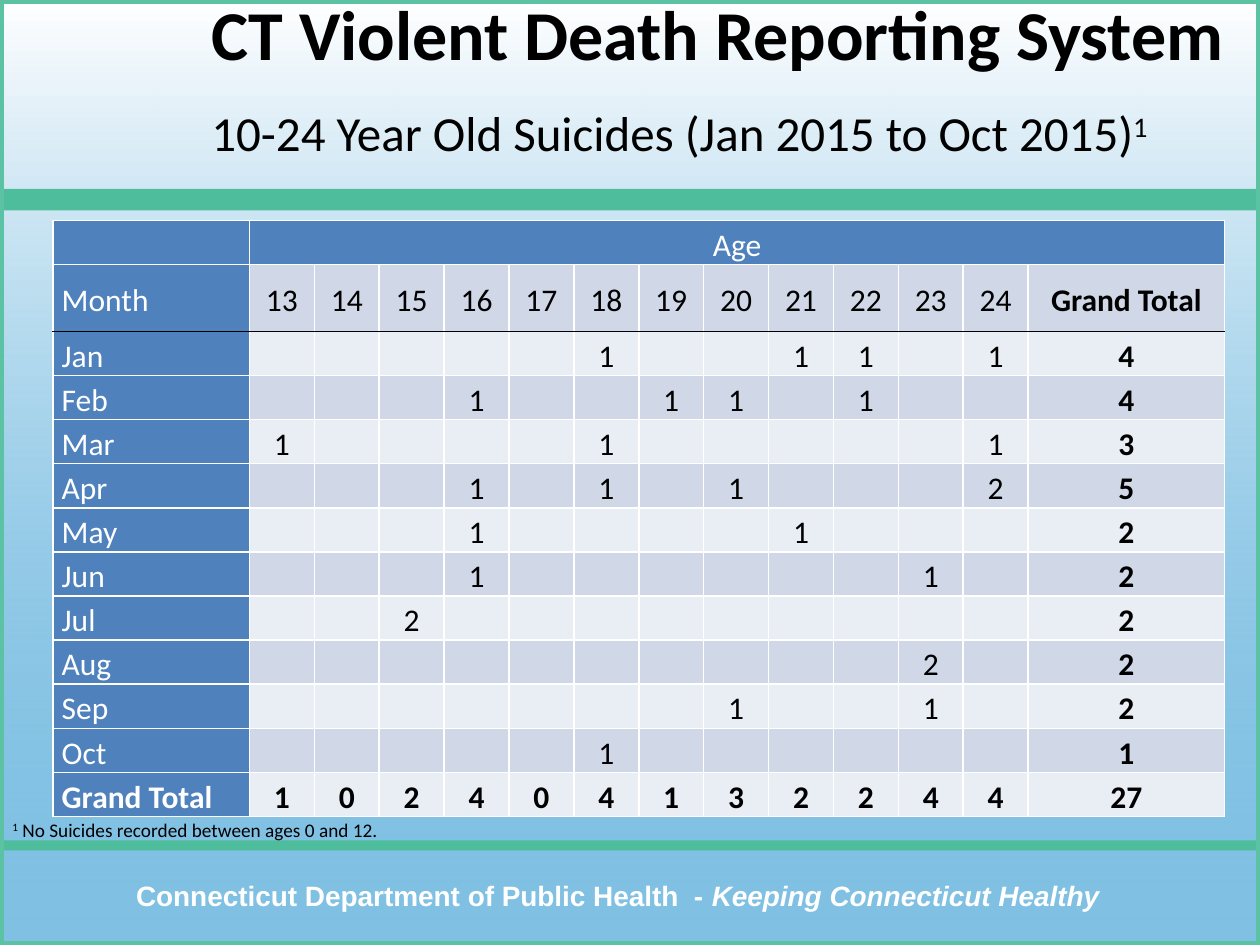
from dataclasses import dataclass

from lxml import etree
from pptx import Presentation
from pptx.dml.color import RGBColor
from pptx.enum.shapes import MSO_SHAPE
from pptx.enum.text import MSO_ANCHOR, MSO_AUTO_SIZE, PP_ALIGN
from pptx.oxml.ns import qn
from pptx.util import Inches, Pt

RECTANGLE = MSO_SHAPE.RECTANGLE
MIDDLE, TOP = MSO_ANCHOR.MIDDLE, MSO_ANCHOR.TOP
LEFT, CENTER = PP_ALIGN.LEFT, PP_ALIGN.CENTER
GROW = MSO_AUTO_SIZE.SHAPE_TO_FIT_TEXT


@dataclass(frozen=True)
class Theme:
    sky: str = "0082C8"
    green: str = "4DBD9C"
    frame: str = "5BC2A4"
    header: str = "4F81BD"
    bands: tuple = ("E9EDF4", "D0D8E8")
    white: str = "FFFFFF"
    black: str = "000000"
    body_font: str = "Calibri"
    footer_font: str = "Arial"
    title_size: float = 40
    subtitle_size: float = 28
    table_size: float = 18
    footer_size: float = 16
    note_size: float = 11


AGES = range(13, 25)
# Suicides by month, then by age
COUNTS = {
    "Jan": {18: 1, 21: 1, 22: 1, 24: 1},
    "Feb": {16: 1, 19: 1, 20: 1, 22: 1},
    "Mar": {13: 1, 18: 1, 24: 1},
    "Apr": {16: 1, 18: 1, 20: 1, 24: 2},
    "May": {16: 1, 21: 1},
    "Jun": {16: 1, 23: 1},
    "Jul": {15: 2},
    "Aug": {23: 2},
    "Sep": {20: 1, 23: 1},
    "Oct": {18: 1},
}


def table_rows():
    rows = [["", "Age"] + [""] * len(AGES), ["Month", *AGES, "Grand Total"]]
    for month, counts in COUNTS.items():
        rows.append([month, *(counts.get(age, "") for age in AGES), sum(counts.values())])
    totals = [sum(counts.get(age, 0) for counts in COUNTS.values()) for age in AGES]
    rows.append(["Grand Total", *totals, sum(totals)])
    return rows


class SlideBuilder:
    def __init__(self, page, theme):
        self.page = page
        self.theme = theme

    def rectangle(self, left, top, width, height, fill=None, line=None, line_width=0):
        shape = self.page.shapes.add_shape(
            RECTANGLE, Inches(left), Inches(top), Inches(width), Inches(height))
        shape.shadow.inherit = False
        if fill:
            shape.fill.solid()
            shape.fill.fore_color.rgb = RGBColor.from_string(fill)
        else:
            shape.fill.background()
        if line:
            shape.line.color.rgb = RGBColor.from_string(line)
            shape.line.width = Pt(line_width)
        else:
            shape.line.fill.background()
        return shape

    def gradient(self, shape, start, end, start_alpha):
        shape.fill.gradient()
        shape.fill.gradient_angle = 90
        for stop, color in zip(shape.fill.gradient_stops, (start, end)):
            stop.color.rgb = RGBColor.from_string(color)
        first_color = shape.element.spPr.find(".//" + qn("a:srgbClr"))
        etree.SubElement(first_color, qn("a:alpha"), val=str(start_alpha * 1000))

    def style(self, span, size, color, font=None, bold=False, italic=False, raised=False):
        span.font.size = Pt(size)
        span.font.name = font or self.theme.body_font
        span.font.bold = bold
        span.font.italic = italic
        span.font.color.rgb = RGBColor.from_string(color)
        if raised:
            span.font._element.set("baseline", "30000")

    def text(self, left, top, width, height, spans, align=LEFT, anchor=TOP, wrap=True):
        """Each span is a text with its style; None is a line break."""
        box = self.page.shapes.add_textbox(
            Inches(left), Inches(top), Inches(width), Inches(height))
        frame = box.text_frame
        frame.word_wrap = wrap
        frame.vertical_anchor = anchor
        para = frame.paragraphs[0]
        para.alignment = align
        for item in spans:
            if item is None:
                para.add_line_break()
                continue
            span = para.add_run()
            span.text, look = item
            self.style(span, **look)
        return frame

    def borders(self, cell, top, bottom):
        properties = cell._tc.get_or_add_tcPr()
        sides = {"L": self.theme.white, "R": self.theme.white, "T": top, "B": bottom}
        for side, color in sides.items():
            line = etree.SubElement(properties, qn(f"a:ln{side}"), w=str(Pt(1)))
            fill = etree.SubElement(line, qn("a:solidFill"))
            etree.SubElement(fill, qn("a:srgbClr"), val=color)

    def cell(self, cell, value, fill, color, bold, align, top, bottom):
        self.borders(cell, top, bottom)
        cell.fill.solid()
        cell.fill.fore_color.rgb = RGBColor.from_string(fill)
        cell.vertical_anchor = MIDDLE
        cell.margin_left = cell.margin_right = Inches(0.07)
        cell.margin_top = cell.margin_bottom = 0
        if value == "":
            return
        cell.text = str(value)
        para = cell.text_frame.paragraphs[0]
        para.alignment = align
        para.line_spacing = 1.15
        self.style(para.runs[0], self.theme.table_size, color, bold=bold)

    def table(self, left, top, width, rows, side_width, row_height, ages_height):
        theme = self.theme
        last_row, last_column = len(rows) - 1, len(rows[0]) - 1
        height = row_height * last_row + ages_height
        table = self.page.shapes.add_table(
            len(rows), len(rows[0]), Inches(left), Inches(top),
            Inches(width), Inches(height)).table
        table.first_row = table.horz_banding = False
        age_width = (width - 2 * side_width) / (last_column - 1)
        for index, column in enumerate(table.columns):
            column.width = Inches(side_width if index in (0, last_column) else age_width)
        for r, values in enumerate(rows):
            table.rows[r].height = Inches(ages_height if r == 1 else row_height)
            for c, value in enumerate(values):
                heading = r == 0 or c == 0
                total = r == last_row or (c == last_column and r > 0)
                self.cell(
                    table.cell(r, c), value,
                    fill=theme.header if heading else theme.bands[r % 2],
                    color=theme.white if heading else theme.black,
                    bold=total,
                    align=LEFT if c == 0 else CENTER,
                    top=theme.black if r == 2 else theme.white,
                    bottom=theme.black if r == 1 else theme.white)
        table.cell(0, 1).merge(table.cell(0, last_column))


def main():
    theme = Theme()
    deck = Presentation()
    deck.slide_width, deck.slide_height = Inches(10), Inches(7.5)
    builder = SlideBuilder(deck.slides.add_slide(deck.slide_layouts[6]), theme)

    # Background, footer and frame
    backdrop = builder.rectangle(0, 0, 10, 7.5)
    builder.gradient(backdrop, theme.sky, theme.white, start_alpha=50)
    builder.rectangle(0, 6.67, 10, 0.08, fill=theme.green)
    footer = dict(size=theme.footer_size, color=theme.white, font=theme.footer_font, bold=True)
    frame = builder.text(0.58, 6.92, 8.83, 0.37, [
        ("Connecticut Department of Public Health  - ", footer),
        ("Keeping Connecticut Healthy", footer | {"italic": True}),
    ], align=CENTER)
    frame.margin_right = Inches(0.28)
    frame.auto_size = GROW
    builder.rectangle(0, 1.5, 10, 0.17, fill=theme.green)
    builder.rectangle(0, 0, 10, 7.5, line=theme.frame, line_width=4.5)

    # Title
    subtitle = dict(size=theme.subtitle_size, color=theme.black)
    frame = builder.text(1.58, 0, 8.33, 1.5, [
        ("CT Violent Death Reporting System ",
         dict(size=theme.title_size, color=theme.black, bold=True)),
        None,
        ("10-24 Year Old Suicides (Jan 2015 to Oct 2015)", subtitle),
        ("1", subtitle | {"raised": True}),
    ])
    frame.margin_top = frame.margin_bottom = 0
    frame.paragraphs[0].line_spacing = 0.9

    # Suicides by month and age
    builder.table(0.42, 1.75, 9.3, table_rows(),
                  side_width=1.56, row_height=0.35, ages_height=0.53)

    # Footnote
    note = dict(size=theme.note_size, color=theme.black)
    frame = builder.text(0, 6.44, 3.27, 0.29, [
        ("1", note | {"raised": True}),
        (" No Suicides recorded between ages 0 and 12.", note),
    ], anchor=MIDDLE, wrap=False)
    frame.auto_size = GROW

    deck.save("out.pptx")


if __name__ == "__main__":
    main()
